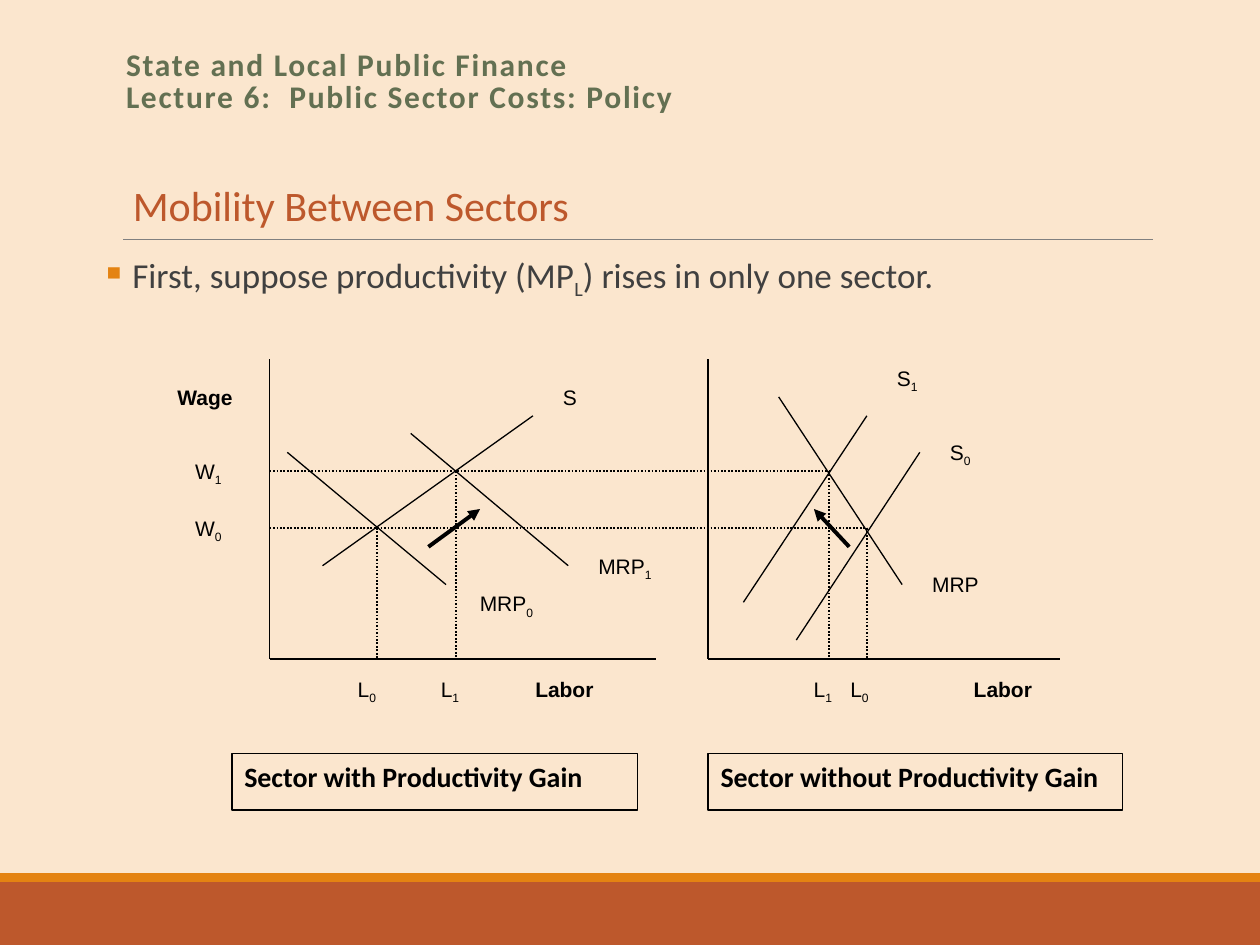
import pptx
import pptx.dml.color
import pptx.enum.dml
import pptx.enum.shapes
import pptx.enum.text
import pptx.oxml.ns
import pptx.util
from lxml import etree
from pptx.util import Inches, Pt

COLORS = {
    "background": "FBE6CE", "footer": "BD582C", "accent": "E48312",
    "rule": "808080", "header": "637052", "heading": "BD582C",
    "body": "404040", "ink": "000000",
}
AXIS_TOP, AXIS_BOTTOM = 2.85, 5.23
LEFT_AXIS, RIGHT_AXIS = 2.14, 5.62
WAGE_0, WAGE_1 = 4.19, 3.74
LABEL_HEIGHT = 0.45


def rgb(name):
    return pptx.dml.color.RGBColor.from_string(COLORS[name])


def add_child(parent, tag, **attributes):
    return etree.SubElement(parent, pptx.oxml.ns.qn(tag), attributes)


def add_runs(paragraph, parts, font, size, color, bold=False):
    """Write parts as runs; a leading _ marks a subscript, a leading * bold."""
    for part in parts:
        run = paragraph.add_run()
        run.text = part.lstrip("_*")
        run.font.name, run.font.size = font, Pt(size)
        run.font.color.rgb = rgb(color)
        run.font.bold = bold or part.startswith("*")
        if part.startswith("_"):
            run.font._element.set("baseline", "-25000")


def add_line(slide, start, end, width=0.75, color="ink", dotted=False, arrow=False):
    line = slide.shapes.add_connector(
        pptx.enum.shapes.MSO_CONNECTOR.STRAIGHT,
        *(Inches(value) for value in (*start, *end)))
    line.line.width = Pt(width)
    line.line.color.rgb = rgb(color)
    if dotted:
        line.line.dash_style = pptx.enum.dml.MSO_LINE.ROUND_DOT
    if arrow:
        add_child(line.line._get_or_add_ln(), "a:tailEnd", type="triangle")
    add_child(line._element.spPr, "a:effectLst")


def add_rectangle(slide, left, top, width, height, fill, outlined=False):
    shape = slide.shapes.add_shape(
        pptx.enum.shapes.MSO_SHAPE.RECTANGLE,
        Inches(left), Inches(top), Inches(width), Inches(height))
    shape.shadow.inherit = False
    shape.fill.solid()
    shape.fill.fore_color.rgb = rgb(fill)
    if outlined:
        shape.line.width = Pt(0.75)
        shape.line.color.rgb = rgb("ink")
    else:
        shape.line.fill.background()
    return shape


def add_label(slide, left, top, width, parts, font="Arial", size=12,
              bold=False, outlined=False, tabs=()):
    shape = add_rectangle(slide, left, top, width, LABEL_HEIGHT, "background", outlined)
    shape.text_frame.vertical_anchor = pptx.enum.text.MSO_ANCHOR.TOP
    paragraph = shape.text_frame.paragraphs[0]
    paragraph.alignment = pptx.enum.text.PP_ALIGN.LEFT
    if tabs:
        tab_list = add_child(paragraph._p.get_or_add_pPr(), "a:tabLst")
        for position in tabs:
            add_child(tab_list, "a:tab", pos=str(Inches(position)), algn="l")
    add_runs(paragraph, parts, font, size, "ink", bold)


def add_text_box(slide, left, top, width, height):
    return slide.shapes.add_textbox(
        Inches(left), Inches(top), Inches(width), Inches(height)).text_frame


def add_header(slide):
    title = slide.shapes.title
    title.left, title.top = Inches(0.9), Inches(0.33)
    title.width, title.height = Inches(8.25), Inches(0.65)
    frame = title.text_frame
    frame.text = "State and Local Public Finance\vLecture 6:  Public Sector Costs: Policy"
    frame.auto_size = pptx.enum.text.MSO_AUTO_SIZE.NONE
    frame.vertical_anchor = pptx.enum.text.MSO_ANCHOR.MIDDLE
    paragraph = frame.paragraphs[0]
    paragraph.alignment = pptx.enum.text.PP_ALIGN.LEFT
    paragraph.line_spacing = 0.85
    for run in paragraph.runs:
        run.font.name, run.font.size, run.font.bold = "Calibri", Pt(18), True
        run.font.color.rgb = rgb("header")
        run.font._element.set("spc", "100")


def add_heading(slide):
    frame = add_text_box(slide, 0.89, 1.42, 3.79, 0.46)
    frame.word_wrap = False
    paragraph = frame.paragraphs[0]
    paragraph.alignment = pptx.enum.text.PP_ALIGN.CENTER
    paragraph.line_spacing = 0.9
    add_runs(paragraph, ["Mobility Between Sectors"], "Calibri", 24, "heading")


def add_bullet(slide):
    frame = add_text_box(slide, 0.8, 1.77, 8.25, 4.4)
    frame.word_wrap = True
    frame.margin_left = frame.margin_right = 0
    paragraph = frame.paragraphs[0]
    paragraph.line_spacing = 1.5
    paragraph.space_before, paragraph.space_after = Pt(6.8), Pt(1.1)
    properties = paragraph._p.get_or_add_pPr()
    properties.set("marL", str(Inches(0.25)))
    properties.set("indent", str(Inches(-0.25)))
    bullet_color = add_child(properties, "a:buClr")
    add_child(bullet_color, "a:srgbClr", val=COLORS["accent"])
    add_child(properties, "a:buChar", char="▪")
    add_runs(paragraph, ["First, suppose productivity (MP", "_L", ") rises in only one sector."],
             "Calibri", 20, "body")


def add_diagrams(slide):
    # Axes
    for left, right in ((LEFT_AXIS, 5.21), (RIGHT_AXIS, 8.41)):
        add_line(slide, (left, AXIS_TOP), (left, AXIS_BOTTOM))
        add_line(slide, (left, AXIS_BOTTOM), (right, AXIS_BOTTOM))

    # Supply and marginal revenue product curves
    for start, end in (
        ((2.56, 4.49), (4.23, 3.3)), ((2.28, 3.59), (3.54, 4.64)),
        ((3.26, 3.44), (4.51, 4.49)), ((6.18, 3.15), (7.16, 4.64)),
        ((7.3, 3.59), (6.32, 5.08)), ((6.88, 3.3), (5.9, 4.78)),
    ):
        add_line(slide, start, end)

    # Wage levels, then the labor each one gives
    for wage, right in ((WAGE_0, 6.88), (WAGE_1, 6.6)):
        add_line(slide, (LEFT_AXIS, wage), (right, wage), 1, dotted=True)
    for labor, wage in ((2.99, WAGE_0), (3.62, WAGE_1), (6.58, WAGE_1), (6.88, WAGE_0)):
        add_line(slide, (labor, wage), (labor, AXIS_BOTTOM), 1, dotted=True)

    # Curve and wage labels
    for left, top, width, parts in (
        (4.65, 4.34, 0.84, ["MRP", "_1"]), (3.71, 4.64, 0.84, ["MRP", "_0"]),
        (1.31, 3, 0.7, ["*Wage"]), (7.44, 3.44, 0.7, ["S", "_0"]),
        (4.37, 3, 0.56, ["S"]), (7.3, 4.49, 0.7, ["MRP"]),
        (7.02, 2.85, 0.7, ["S", "_1"]),
        (1.45, 4.04, 0.56, ["W", "_0"]), (1.45, 3.59, 0.56, ["W", "_1"]),
    ):
        add_label(slide, left, top, width, parts)

    # Labor axis labels
    for left, first, second, tabs in (
        (LEFT_AXIS, "_0", "_1", (0.6, 1.26, 2.01)),
        (RIGHT_AXIS, "_1", "_0", (0.74, 1.03, 2.01)),
    ):
        add_label(slide, left, 5.32, 2.93,
                  ["\tL", first, "\tL", second, "\t", "*Labor"], tabs=tabs)

    # Sector captions
    for left, width, text in (
        (1.84, 3.22, "Sector with Productivity Gain"),
        (RIGHT_AXIS, 3.29, "Sector without Productivity Gain"),
    ):
        add_label(slide, left, 5.98, width, [text], "Calibri", 16, bold=True, outlined=True)

    # Shifts of the curves
    for start, end in (((3.4, 4.34), (3.81, 4.04)), ((6.74, 4.34), (6.46, 4.04))):
        add_line(slide, start, end, 2.25, arrow=True)


def main():
    presentation = pptx.Presentation()
    presentation.slide_width, presentation.slide_height = Inches(10), Inches(7.5)
    slide = presentation.slides.add_slide(presentation.slide_layouts[5])
    slide.background.fill.solid()
    slide.background.fill.fore_color.rgb = rgb("background")

    # Footer bands and heading rule
    add_rectangle(slide, 0, 7, 10, 0.5, "footer")
    add_rectangle(slide, 0, 6.93, 10, 0.07, "accent")
    add_line(slide, (0.98, 1.9), (9.15, 1.9), 0.5, "rule")

    add_header(slide)
    add_heading(slide)
    add_bullet(slide)
    add_diagrams(slide)
    presentation.save("out.pptx")


if __name__ == "__main__":
    main()
